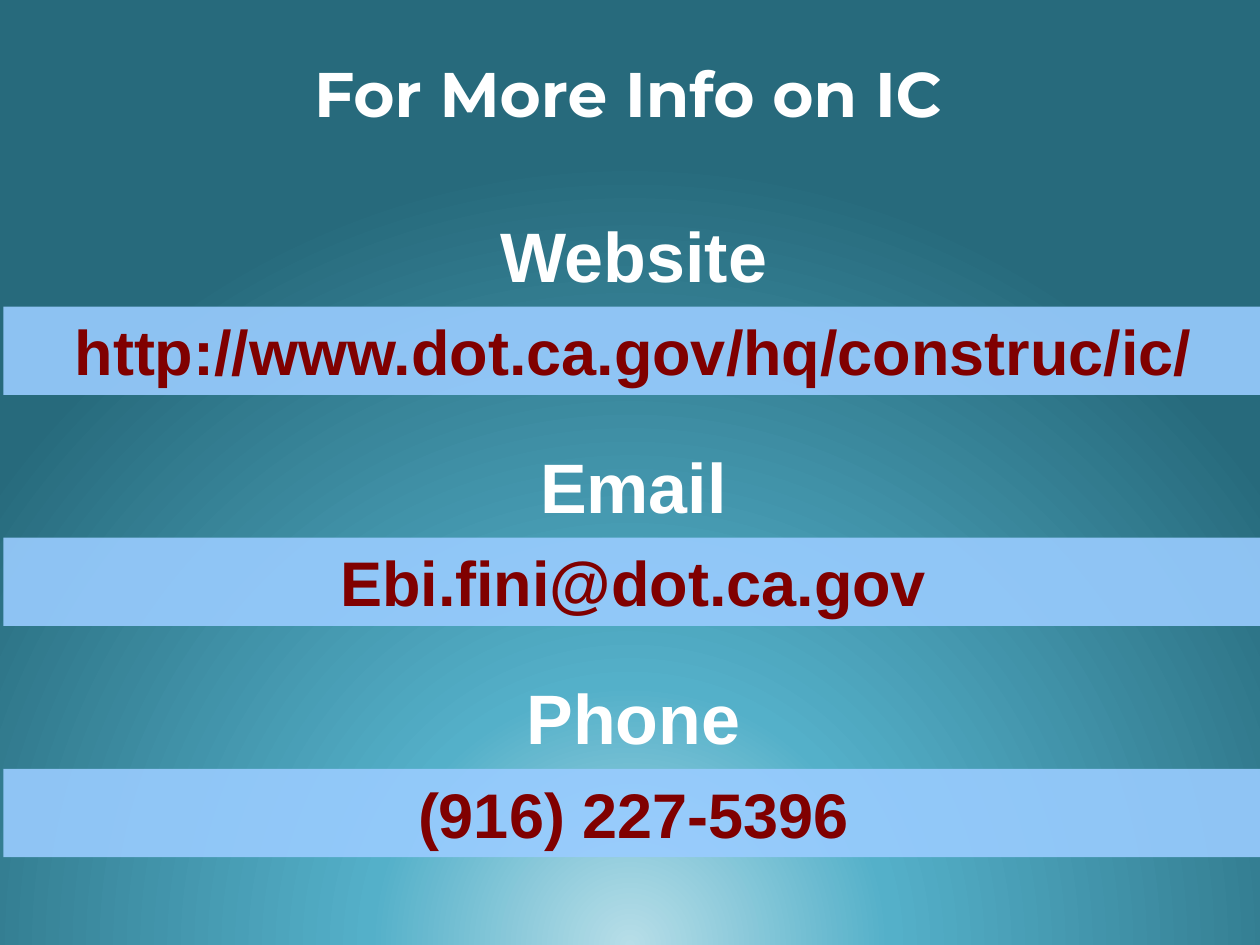
import pptx
import pptx.util
import pptx.oxml
import pptx.oxml.ns
import pptx.dml.color
import pptx.enum.shapes
import pptx.enum.text
from lxml import etree

Cm = pptx.util.Cm
HUES = {"text": "FFFFFF", "bar": "99CCFF", "link": "800000",
        "glow": "B7DEE8", "mid": "54B0C9", "edge": "276A7C"}
ITEMS = [("Website", "http://www.dot.ca.gov/hq/construc/ic/"),
         ("Email", "Ebi.fini@dot.ca.gov"),
         ("Phone", "(916) 227-5396")]


def hue(name):
    """Return the named colour."""
    return pptx.dml.color.RGBColor.from_string(HUES[name])


def write(shape, text, size=36, font="Arial", color="text", anchor="TOP"):
    """Put one bold centred line of text in a shape."""
    frame = shape.text_frame
    frame.word_wrap = True
    frame.vertical_anchor = getattr(pptx.enum.text.MSO_ANCHOR, anchor)
    line = frame.paragraphs[0]
    line.alignment = pptx.enum.text.PP_ALIGN.CENTER
    run = line.add_run()
    run.text = text
    run.font.size = pptx.util.Pt(size)
    run.font.name = font
    run.font.bold = True
    run.font.color.rgb = hue(color)


def paint(slide):
    """Fill the background with a glow that rises from below the slide."""
    stops = "".join(
        f'<a:gs pos="{pos * 1000}"><a:srgbClr val="{HUES[name]}"/></a:gs>'
        for pos, name in ((0, "glow"), (33, "mid"), (100, "edge")))
    slide.element.cSld.insert(0, pptx.oxml.parse_xml(
        f'<p:bg {pptx.oxml.ns.nsdecls("p", "a")}><p:bgPr>'
        f'<a:gradFill rotWithShape="1"><a:gsLst>{stops}</a:gsLst>'
        '<a:path path="circle">'
        '<a:fillToRect l="50000" t="130000" r="50000" b="-30000"/>'
        '</a:path></a:gradFill><a:effectLst/></p:bgPr></p:bg>'))


def head(slide, left, top, width, height):
    """Add the title in the given box."""
    box = slide.shapes.add_textbox(left, top, width, height)
    write(box, "For More Info on IC", font="Montserrat", anchor="MIDDLE")


def entry(slide, left, top, width, label, value):
    """Add a label with its value on a bar below."""
    box = slide.shapes.add_textbox(left, top, width, Cm(1.96))
    write(box, label, size=40)
    bar = slide.shapes.add_shape(
        pptx.enum.shapes.MSO_SHAPE.RECTANGLE,
        left, top + Cm(2.02), width, Cm(1.78))
    bar.shadow.inherit = False
    bar.line.fill.background()
    bar.fill.solid()
    bar.fill.fore_color.rgb = hue("bar")
    tint = bar.element.spPr.find(".//" + pptx.oxml.ns.qn("a:srgbClr"))
    etree.SubElement(tint, pptx.oxml.ns.qn("a:alpha"), val="90000")
    write(bar, value, color="link")


def main():
    """Build and save the slide."""
    deck = pptx.Presentation()
    deck.slide_width, deck.slide_height = Cm(25.4), Cm(19.05)
    slide = deck.slides.add_slide(deck.slide_layouts[6])
    paint(slide)
    head(slide, 0, Cm(0.28), Cm(25.32), Cm(3.18))
    for row, (label, value) in enumerate(ITEMS):
        entry(slide, Cm(0.07), Cm(4.16 + 4.66 * row), Cm(25.4), label, value)
    deck.save("out.pptx")


if __name__ == "__main__":
    main()
